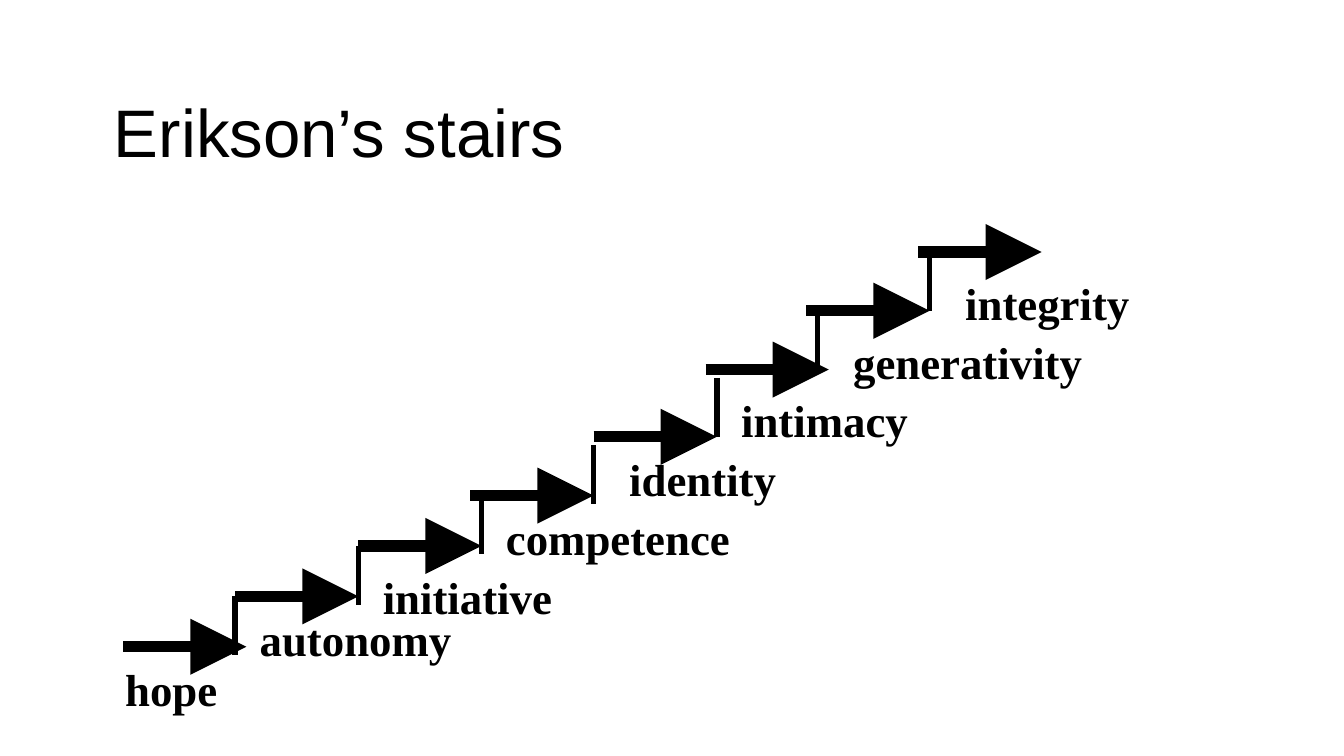
from lxml.etree import SubElement
from pptx import Presentation
from pptx.dml.color import RGBColor
from pptx.enum.shapes import MSO_CONNECTOR
from pptx.enum.text import MSO_ANCHOR
from pptx.oxml.ns import qn
from pptx.util import Pt

COLORS = {"ink": "000000", "paper": "FFFFFF"}
TREAD_LENGTH = 66
RISER_HEIGHT = 31.5

# Stage, tread start (x, y), label box (left, top, width)
STAGES = [
    ("hope", (66, 346.5), (60, 351, 66)),
    ("autonomy", (126, 319.5), (132, 324, 138)),
    ("initiative", (192, 292.5), (198, 301.5, 156)),
    ("competence", (252, 265.5), (264, 270, 144)),
    ("identity", (318, 234), (330, 238.5, 162)),
    ("intimacy", (378, 198), (390, 207, 138)),
    ("generativity", (432, 166.5), (450, 175.5, 150)),
    ("integrity", (492, 135), (510, 144, 108)),
]

# Top of the riser that leads up to each stage after the first
RISER_TOPS = [(126, 319.5), (192, 292.5), (258, 265.5), (318, 238.5),
              (384, 202.5), (438, 166.5), (498, 135)]


class StairSlide:
    """Holds the style and the current slide."""

    title_font, label_font = "Arial", "Times New Roman"
    title_size, label_size = 36, 24
    tread_weight, riser_weight = 6, 3

    def __init__(self, deck):
        self.slide = deck.slides.add_slide(deck.slide_layouts[6])
        fill = self.slide.background.fill
        fill.solid()
        fill.fore_color.rgb = RGBColor.from_string(COLORS["paper"])

    def text(self, words, left, top, width, height, font, size, bold, anchor):
        box = self.slide.shapes.add_textbox(Pt(left), Pt(top), Pt(width), Pt(height))
        frame = box.text_frame
        frame.word_wrap = True
        frame.vertical_anchor = anchor
        frame.text = words
        style = frame.paragraphs[0].runs[0].font
        style.name, style.size, style.bold = font, Pt(size), bold
        style.color.rgb = RGBColor.from_string(COLORS["ink"])

    def title(self, words):
        self.text(words, 54, 36, 612, 67.5, self.title_font, self.title_size,
                  False, MSO_ANCHOR.MIDDLE)

    def label(self, words, left, top, width):
        self.text(words, left, top, width, 27, self.label_font, self.label_size,
                  True, MSO_ANCHOR.TOP)

    def line(self, x1, y1, x2, y2, weight):
        stroke = self.slide.shapes.add_connector(
            MSO_CONNECTOR.STRAIGHT, Pt(x1), Pt(y1), Pt(x2), Pt(y2))
        stroke.line.width = Pt(weight)
        stroke.line.color.rgb = RGBColor.from_string(COLORS["ink"])
        SubElement(stroke._element.spPr, qn("a:effectLst"))
        return stroke

    def tread(self, x, y):
        arrow = self.line(x, y, x + TREAD_LENGTH, y, self.tread_weight)
        SubElement(arrow.line._get_or_add_ln(), qn("a:tailEnd"),
                   type="triangle", w="lg", len="lg")

    def riser(self, x, top):
        self.line(x, top, x, top + RISER_HEIGHT, self.riser_weight)


def main():
    deck = Presentation()
    deck.slide_width, deck.slide_height = Pt(720), Pt(405)
    stairs = StairSlide(deck)

    # Heading
    stairs.title("Erikson’s stairs")

    # Steps
    for _, start, _ in STAGES:
        stairs.tread(*start)
    for riser_top in RISER_TOPS:
        stairs.riser(*riser_top)

    # Stage names
    for stage, _, place in STAGES:
        stairs.label(stage, *place)

    deck.save("out.pptx")


if __name__ == "__main__":
    main()
